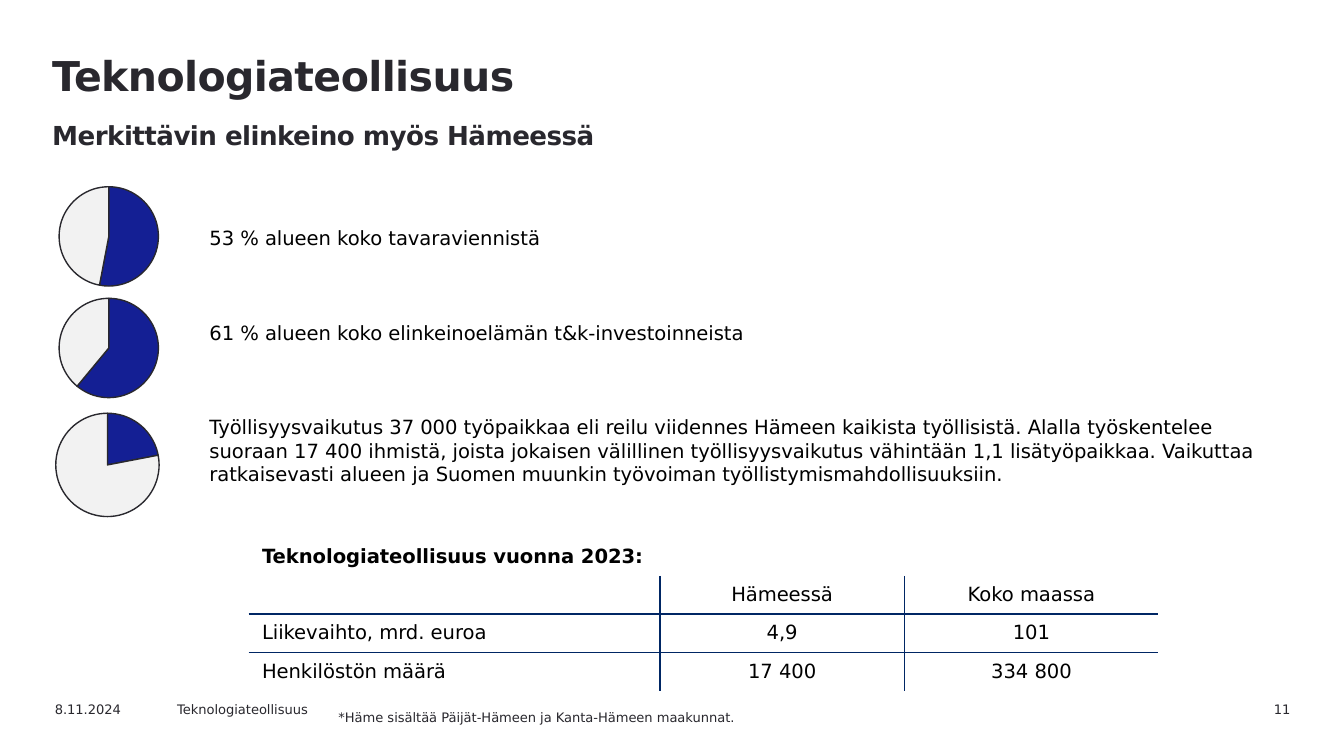
"""Build the slide on the technology industry in Häme."""
from dataclasses import dataclass

from lxml import etree
from pptx import Presentation
from pptx.chart.data import CategoryChartData
from pptx.dml.color import RGBColor
from pptx.enum.chart import XL_CHART_TYPE
from pptx.enum.text import MSO_ANCHOR, PP_ALIGN
from pptx.oxml import parse_xml
from pptx.oxml.ns import nsdecls, qn
from pptx.slide import Slide
from pptx.table import _Cell
from pptx.text.text import TextFrame, _Paragraph
from pptx.util import Emu, Pt

PIE = XL_CHART_TYPE.PIE
MIDDLE = MSO_ANCHOR.MIDDLE
LEFT, CENTER, RIGHT = PP_ALIGN.LEFT, PP_ALIGN.CENTER, PP_ALIGN.RIGHT

PX = 4572
FONT = "DejaVu Sans"
COLORS = {
    "ink": "29282E",
    "text": "000000",
    "share": "141F94",
    "rest": "F2F2F2",
    "rule": "002664",
}


@dataclass(frozen=True)
class Box:
    left: int
    top: int
    width: int
    height: int

    def emu(self) -> tuple[Emu, ...]:
        return tuple(Emu(n * PX) for n in (self.left, self.top, self.width, self.height))


@dataclass(frozen=True)
class SharePie:
    box: Box
    percent: int


@dataclass(frozen=True)
class SmallPrint:
    text: str
    box: Box
    align: PP_ALIGN = LEFT


HEADINGS = (("Teknologiateollisuus", 22), ("Merkittävin elinkeino myös Hämeessä", 14))
PIES = (
    SharePie(Box(62, 252, 200, 200), 53),
    SharePie(Box(62, 418, 200, 200), 61),
    SharePie(Box(56, 588, 208, 208), 22),
)
FACTS = (
    "53 % alueen koko tavaraviennistä",
    "61 % alueen koko elinkeinoelämän t&k-investoinneista",
    "Työllisyysvaikutus 37 000 työpaikkaa eli reilu viidennes Hämeen kaikista työllisistä. "
    "Alalla työskentelee suoraan 17 400 ihmistä, joista jokaisen välillinen "
    "työllisyysvaikutus vähintään 1,1 lisätyöpaikkaa. Vaikuttaa ratkaisevasti alueen ja "
    "Suomen muunkin työvoiman työllistymismahdollisuuksiin.",
)
KEY_FIGURES = (
    ("Teknologiateollisuus vuonna 2023:", "", ""),
    ("", "Hämeessä", "Koko maassa"),
    ("Liikevaihto, mrd. euroa", "4,9", "101"),
    ("Henkilöstön määrä", "17 400", "334 800"),
)
COLUMN_WIDTHS = (612, 364, 378)
ROW_HEIGHT = 57
SMALL_PRINTS = (
    SmallPrint("8.11.2024", Box(62, 1034, 200, 36)),
    SmallPrint("Teknologiateollisuus", Box(244, 1034, 284, 36)),
    SmallPrint("11", Box(1752, 1034, 188, 36), RIGHT),
    SmallPrint("*Häme sisältää Päijät-Hämeen ja Kanta-Hämeen maakunnat.", Box(484, 1046, 1362, 34)),
)


def rgb(name: str) -> RGBColor:
    return RGBColor.from_string(COLORS[name])


def style(paragraph: _Paragraph, size: float, color: str, bold: bool = False) -> None:
    font = paragraph.font
    font.name, font.size, font.bold = FONT, Pt(size), bold
    font.color.rgb = rgb(color)


def add_frame(slide: Slide, box: Box) -> TextFrame:
    frame = slide.shapes.add_textbox(*box.emu()).text_frame
    frame.word_wrap = True
    return frame


def add_headings(slide: Slide) -> None:
    frame = add_frame(slide, Box(58, 74, 1748, 130))
    frame.margin_top = 0
    paragraph = frame.paragraphs[0]
    paragraph.line_spacing = Pt(27)
    style(paragraph, HEADINGS[0][1], "ink", True)
    for index, (text, size) in enumerate(HEADINGS):
        if index:
            paragraph.add_line_break()
        run = paragraph.add_run()
        run.text = text
        run.font.size = Pt(size)
        run.font._element.set("spc", "-30")


def add_facts(slide: Slide) -> None:
    frame = add_frame(slide, Box(292, 327, 1638, 484))
    for index, fact in enumerate(FACTS):
        paragraph = frame.add_paragraph() if index else frame.paragraphs[0]
        paragraph.text = fact
        if index:
            paragraph.space_before = Pt(38)
        style(paragraph, 10.5, "text")


def add_pie(slide: Slide, pie: SharePie) -> None:
    shares = CategoryChartData()
    shares.categories = ["1", "2"]
    shares.add_series("Series 1", (pie.percent, 100 - pie.percent))
    chart = slide.shapes.add_chart(PIE, *pie.box.emu(), shares).chart
    chart.has_title = chart.has_legend = False
    chart.font.name, chart.font.size = FONT, Pt(18)
    chart.font.color.rgb = rgb("ink")
    chart.plots[0].vary_by_categories = False
    for index, color in enumerate(("share", "rest")):
        slice_format = chart.plots[0].series[0].points[index].format
        slice_format.fill.solid()
        slice_format.fill.fore_color.rgb = rgb(color)
        slice_format.line.color.rgb = rgb("ink")
        slice_format.line.width = Pt(0.75)
    plot_area = chart._chartSpace.chart.plotArea
    for old_layout in plot_area.findall(qn("c:layout")):
        plot_area.remove(old_layout)
    layout = etree.Element(qn("c:layout"))
    manual = etree.SubElement(layout, qn("c:manualLayout"))
    settings = (("layoutTarget", "inner"), ("xMode", "edge"), ("yMode", "edge"),
                ("x", "0.13"), ("y", "0.13"), ("w", "0.74"), ("h", "0.74"))
    for tag, value in settings:
        etree.SubElement(manual, qn(f"c:{tag}")).set("val", value)
    plot_area.insert(0, layout)


def set_borders(cell: _Cell, ruled_sides: str) -> None:
    cell.fill.background()
    properties = cell._tc.get_or_add_tcPr()
    for index, side in enumerate("LRTB"):
        paint = "<a:noFill/>"
        if side in ruled_sides:
            paint = f'<a:solidFill><a:srgbClr val="{COLORS["rule"]}"/></a:solidFill>'
        border = f'<a:ln{side} {nsdecls("a")} w="{Pt(1)}">{paint}</a:ln{side}>'
        properties.insert(index, parse_xml(border))


def add_key_figures(slide: Slide) -> None:
    last_row, last_column = len(KEY_FIGURES) - 1, len(COLUMN_WIDTHS) - 1
    box = Box(370, 800, sum(COLUMN_WIDTHS), ROW_HEIGHT * len(KEY_FIGURES))
    table = slide.shapes.add_table(last_row + 1, last_column + 1, *box.emu()).table
    table.first_row = table.horz_banding = False
    for column, width in zip(table.columns, COLUMN_WIDTHS):
        column.width = Emu(width * PX)
    for r, values in enumerate(KEY_FIGURES):
        table.rows[r].height = Emu(ROW_HEIGHT * PX)
        for c, value in enumerate(values):
            cell = table.cell(r, c)
            cell.text = value
            cell.vertical_anchor = MIDDLE
            paragraph = cell.text_frame.paragraphs[0]
            paragraph.alignment = CENTER if c else LEFT
            style(paragraph, 10.5, "text", r == 0)
            rules = {"L": c > 0, "R": c < last_column, "T": r > 1, "B": r < last_row}
            set_borders(cell, "".join(side for side in rules if r and rules[side]))
    table.cell(0, 0).merge(table.cell(0, last_column))


def add_small_print(slide: Slide, item: SmallPrint) -> None:
    paragraph = add_frame(slide, item.box).paragraphs[0]
    paragraph.text = item.text
    paragraph.alignment = item.align
    style(paragraph, 7, "ink")


def main() -> None:
    deck = Presentation()
    deck.slide_width, deck.slide_height = Emu(2000 * PX), Emu(1125 * PX)
    slide = deck.slides.add_slide(deck.slide_layouts[6])
    add_headings(slide)
    add_facts(slide)
    for pie in PIES:
        add_pie(slide, pie)
    add_key_figures(slide)
    for item in SMALL_PRINTS:
        add_small_print(slide, item)
    deck.save("out.pptx")


if __name__ == "__main__":
    main()
